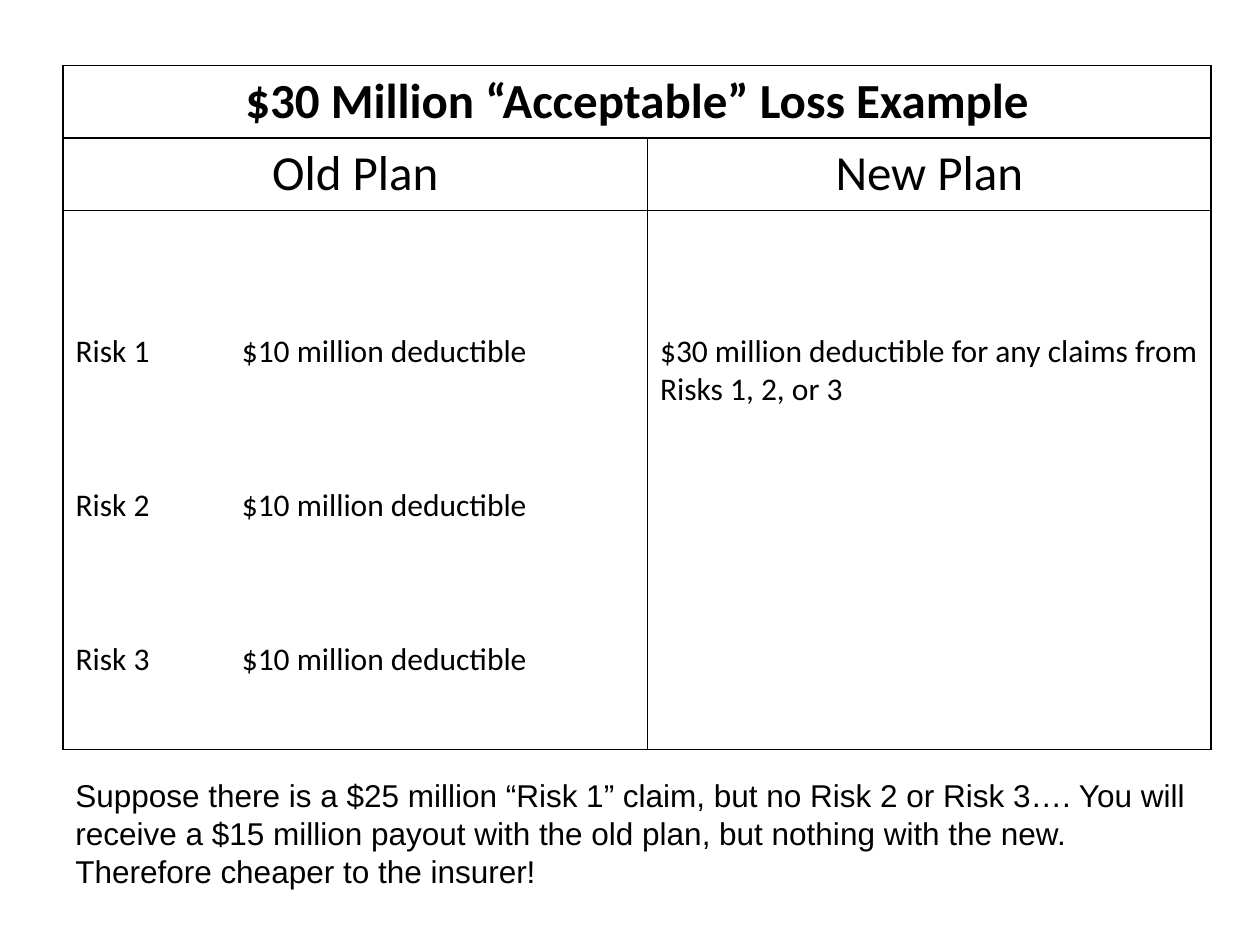
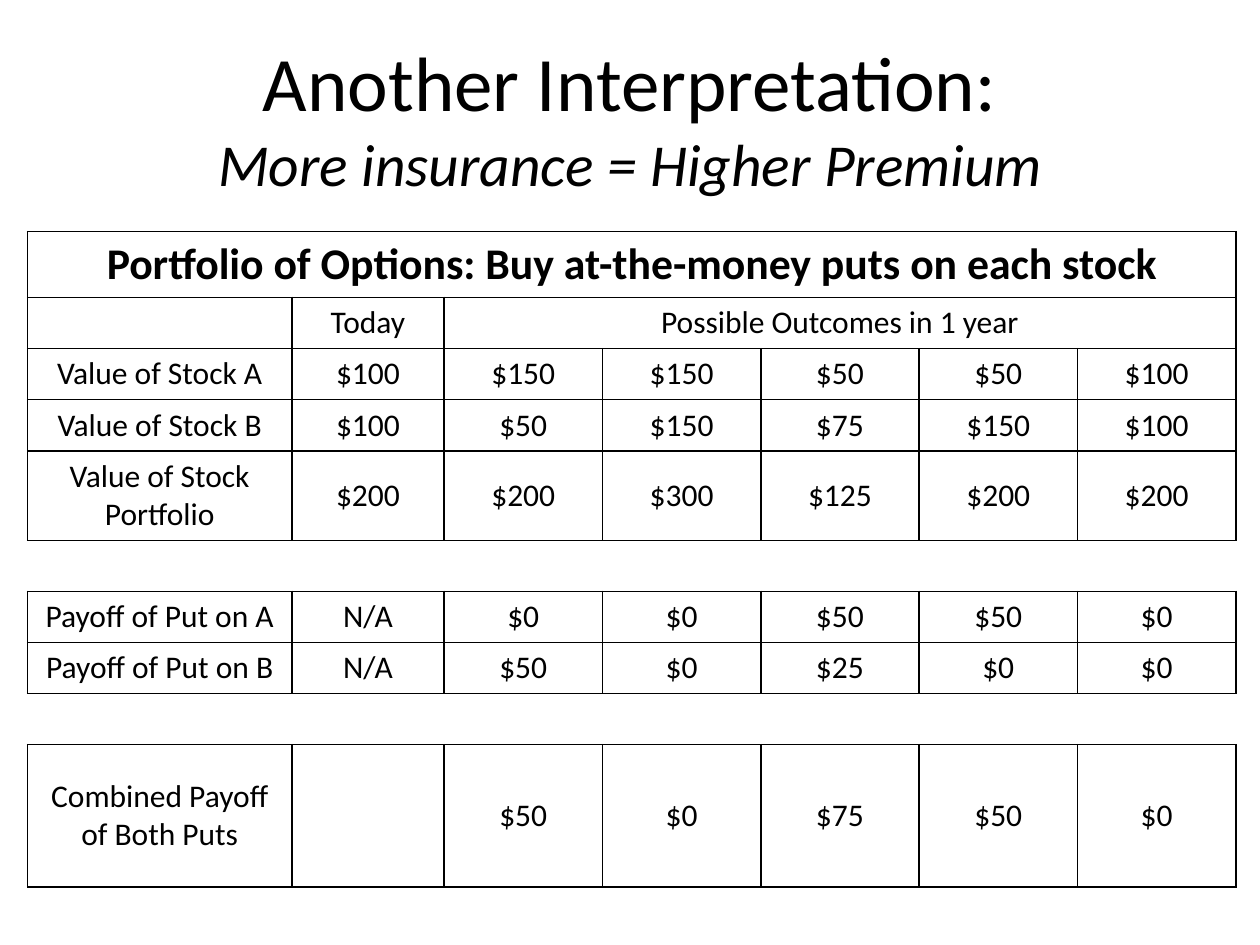
from dataclasses import dataclass, field
from typing import Any

from lxml.etree import SubElement
from pptx import Presentation
from pptx.dml.color import RGBColor
from pptx.enum.text import MSO_ANCHOR as Anchor, MSO_AUTO_SIZE as Fit, PP_ALIGN as Align
from pptx.oxml.ns import qn
from pptx.util import Pt

INK = "000000"
BODY = {"name": "Calibri", "size": Pt(18), "bold": False}
HEAD = BODY | {"size": Pt(28)}
BANNER = HEAD | {"bold": True}
NOTE = BODY | {"name": "Arial"}
TITLE = BODY | {"size": Pt(44)}
SUBTITLE = BODY | {"size": Pt(34), "italic": True}
PLAIN_TABLE = "{2D5ABB26-0587-4C30-8999-92F81FD0307C}"
BLANK_LAYOUT, TITLE_LAYOUT = 6, 5
LINE = 22
AMOUNT_TAB = 95


@dataclass
class Cell:
    lines: list[str]
    fmt: dict[str, Any] = field(default_factory=lambda: BODY)
    span: int = 1
    align: Align = Align.CENTER
    anchor: Anchor = Anchor.MIDDLE
    top: float = 3.6
    gap: float = 0
    tab: float = 0


@dataclass
class Grid:
    left: float
    top: float
    cols: list[float]
    heights: list[float]
    rows: list[list[Cell]]


def rgb(color: str) -> RGBColor:
    return RGBColor.from_string(color)


def add_text(p, text: str, fmt: dict[str, Any]) -> None:
    r = p.add_run()
    r.text = text
    r.font.color.rgb = rgb(INK)
    for name, value in fmt.items():
        setattr(r.font, name, value)


def set_borders(cell, sides: str) -> None:
    tc_pr = cell._tc.get_or_add_tcPr()
    for side in "LRTB":
        ln = SubElement(tc_pr, qn(f"a:ln{side}"), w=str(Pt(1)))
        if side in sides:
            fill = SubElement(ln, qn("a:solidFill"))
            SubElement(fill, qn("a:srgbClr"), val=INK)
        else:
            SubElement(ln, qn("a:noFill"))


def fill_cell(target, cell: Cell) -> None:
    target.vertical_anchor = cell.anchor
    target.margin_top = Pt(cell.top)
    tf = target.text_frame
    for i, line in enumerate(cell.lines):
        p = tf.add_paragraph() if i else tf.paragraphs[0]
        p.alignment = cell.align
        if i:
            p.space_before = Pt(cell.gap)
        if cell.tab:
            tabs = SubElement(p._p.get_or_add_pPr(), qn("a:tabLst"))
            SubElement(tabs, qn("a:tab"), pos=str(Pt(cell.tab)), algn="l")
        if line:
            add_text(p, line, cell.fmt)
        else:
            SubElement(p._p, qn("a:endParaRPr"), sz=str(int(cell.fmt["size"].pt * 100)))


def add_grid(slide, grid: Grid) -> None:
    frame = slide.shapes.add_table(
        len(grid.heights), len(grid.cols), Pt(grid.left), Pt(grid.top),
        Pt(sum(grid.cols)), Pt(sum(grid.heights)))
    table = frame.table
    table.first_row = table.horz_banding = False
    table._tbl.tblPr.find(qn("a:tableStyleId")).text = PLAIN_TABLE
    for col, width in zip(table.columns, grid.cols):
        col.width = Pt(width)
    for y, (cells, height) in enumerate(zip(grid.rows, grid.heights)):
        table.rows[y].height = Pt(height)
        is_spacer = not any(line for cell in cells for line in cell.lines)
        x = 0
        for cell in cells:
            if cell.span > 1:
                table.cell(y, x).merge(table.cell(y, x + cell.span - 1))
            fill_cell(table.cell(y, x), cell)
            x += cell.span
        for x in range(len(grid.cols)):
            target = table.cell(y, x)
            set_borders(target, "TB" if is_spacer else "LRTB")
            target.fill.background()


def text_row(*texts: str) -> list[Cell]:
    return [Cell([text]) for text in texts]


def add_loss_slide(prs) -> None:
    slide = prs.slides.add_slide(prs.slide_layouts[BLANK_LAYOUT])
    left, cols = 36, [334, 322]
    detail = {"align": Align.LEFT, "anchor": Anchor.TOP, "top": 3.6 + 3 * LINE, "gap": 3 * LINE}
    risks = [f"Risk {n}\t$10 million deductible" for n in (1, 2, 3)]
    add_grid(slide, Grid(left, 37.4, cols, [41, 41, 308], [
        [Cell(["$30 Million “Acceptable” Loss Example"], BANNER, span=2)],
        [Cell([plan], HEAD) for plan in ("Old Plan", "New Plan")],
        [Cell(risks, tab=AMOUNT_TAB, **detail),
         Cell(["$30 million deductible for any claims from Risks 1, 2, or 3"], **detail)],
    ]))
    tf = slide.shapes.add_textbox(Pt(left), Pt(440), Pt(sum(cols)), Pt(73)).text_frame
    tf.word_wrap = True
    tf.auto_size = Fit.SHAPE_TO_FIT_TEXT
    add_text(tf.paragraphs[0],
             "Suppose there is a $25 million “Risk 1” claim, but no Risk 2 or Risk 3…. "
             "You will receive a $15 million payout with the old plan, but nothing with the new. "
             "Therefore cheaper to the insurer!", NOTE)


def add_options_slide(prs) -> None:
    slide = prs.slides.add_slide(prs.slide_layouts[TITLE_LAYOUT])
    title = slide.shapes.title
    title.left, title.top, title.width, title.height = Pt(36), Pt(21.6), Pt(648), Pt(90)
    title.text_frame.auto_size = Fit.NONE
    title.text_frame.vertical_anchor = Anchor.MIDDLE
    p = title.text_frame.paragraphs[0]
    p.alignment = Align.CENTER
    add_text(p, "Another Interpretation:", TITLE)
    p.add_line_break()
    add_text(p, "More insurance = Higher Premium", SUBTITLE)

    cols = [151, 87] + [90.5] * 5
    spacer = text_row(*[""] * len(cols))
    line, tall = 28.8, 50.4
    add_grid(slide, Grid(15.8, 132.3, cols, [37.4] + [line] * 3 + [tall] + [line] * 4 + [81.4], [
        [Cell(["Portfolio of Options: Buy at-the-money puts on each stock"],
              BANNER | {"size": Pt(25)}, span=len(cols))],
        text_row("", "Today") + [Cell(["Possible Outcomes in 1 year"], span=5)],
        text_row("Value of Stock A", "$100", "$150", "$150", "$50", "$50", "$100"),
        text_row("Value of Stock B", "$100", "$50", "$150", "$75", "$150", "$100"),
        text_row("Value of Stock Portfolio", "$200", "$200", "$300", "$125", "$200", "$200"),
        spacer,
        text_row("Payoff of Put on A", "N/A", "$0", "$0", "$50", "$50", "$0"),
        text_row("Payoff of Put on B", "N/A", "$50", "$0", "$25", "$0", "$0"),
        spacer,
        text_row("Combined Payoff of Both Puts", "", "$50", "$0", "$75", "$50", "$0"),
    ]))


def main() -> None:
    prs = Presentation()
    prs.slide_width, prs.slide_height = Pt(720), Pt(540)
    add_loss_slide(prs)
    add_options_slide(prs)
    prs.save("out.pptx")


if __name__ == "__main__":
    main()
